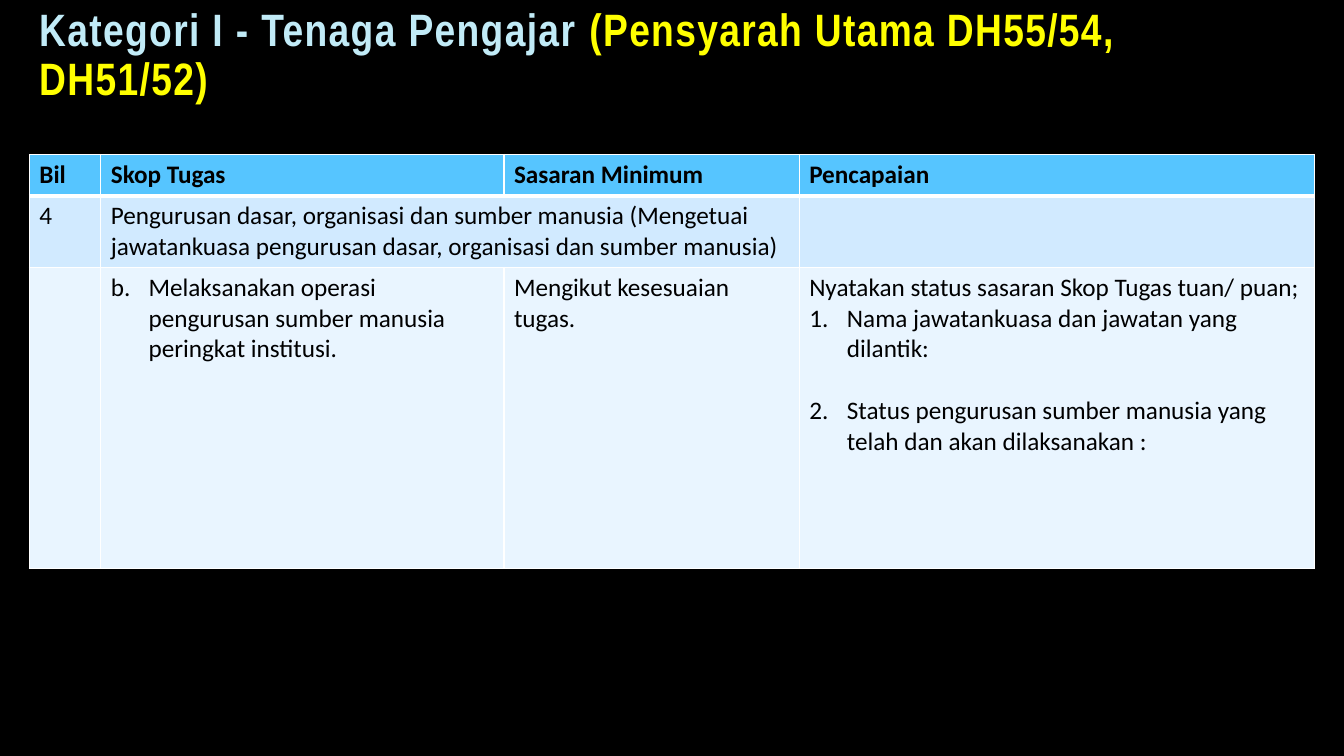
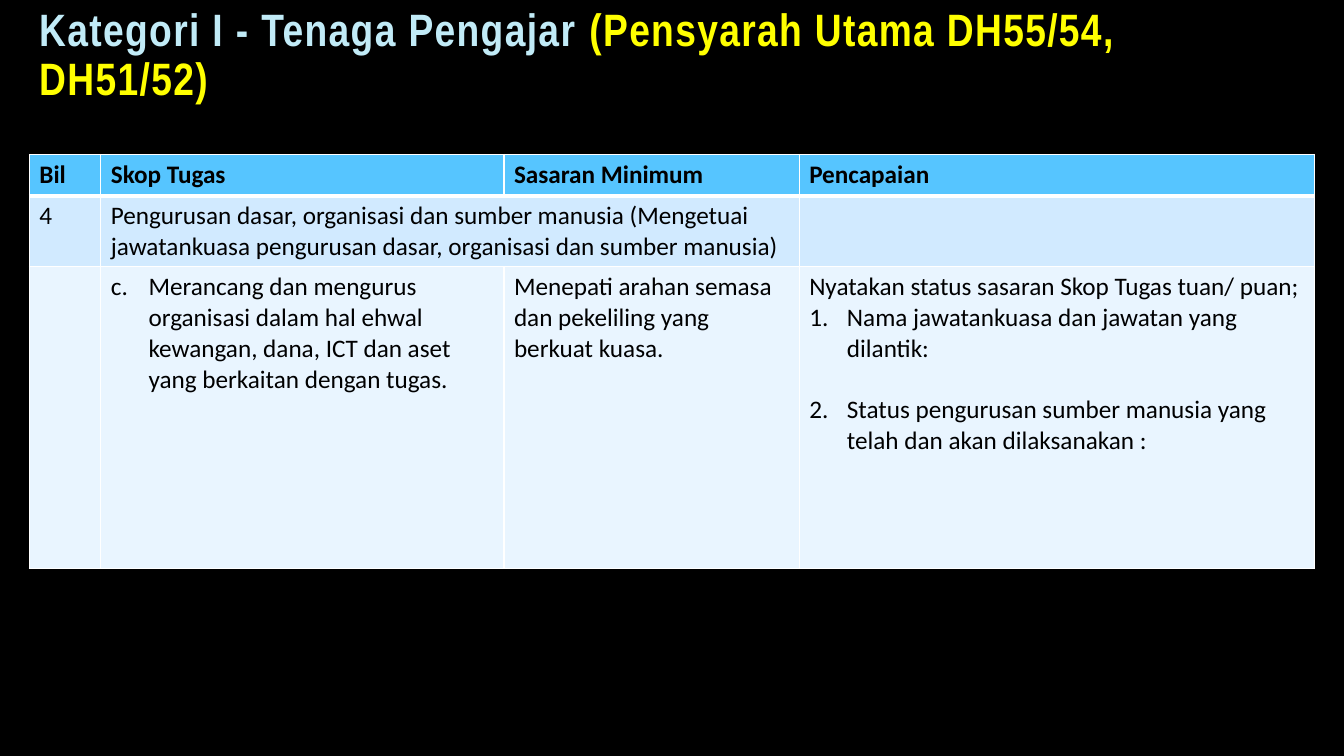
from lxml import etree
from pptx import Presentation
from pptx.dml.color import RGBColor
from pptx.enum.text import MSO_ANCHOR as Anchor
from pptx.oxml import parse_xml
from pptx.oxml.ns import nsdecls, qn
from pptx.util import Cm, Pt

BLACK = RGBColor(0x00, 0x00, 0x00)
WHITE = RGBColor(0xFF, 0xFF, 0xFF)
PALE_CYAN = RGBColor(0xC1, 0xEB, 0xF7)
YELLOW = RGBColor(0xFF, 0xFF, 0x00)
OUTLINE = RGBColor(0x40, 0x40, 0x40)
HEADER_BLUE = RGBColor(0x56, 0xC5, 0xFF)
BAND_BLUE = RGBColor(0xD1, 0xEA, 0xFF)
LIGHT_BLUE = RGBColor(0xE9, 0xF5, 0xFF)

TITLE_FONT, BODY_FONT = "Arial Narrow", "Calibri"
BODY_SIZE = Pt(18)
BLANK_LAYOUT = 6
LEFT = Cm(0.74)
COL_WIDTHS = [Cm(w) for w in (1.8, 10.16, 7.44, 12.98)]
ROW_HEIGHTS = [Cm(h) for h in (1.04, 1.79, 7.6)]
ROW_FILLS = [HEADER_BLUE, BAND_BLUE, LIGHT_BLUE]
LIST_INDENT = Cm(0.95)

TITLE = [("Kategori I - Tenaga Pengajar ", PALE_CYAN),
         ("(Pensyarah Utama DH55/54, DH51/52)", YELLOW)]
HEADINGS = ["Bil", "Skop Tugas", "Sasaran Minimum", "Pencapaian"]
SCOPE = ("Pengurusan dasar, organisasi dan sumber manusia (Mengetuai "
         "jawatankuasa pengurusan dasar, organisasi dan sumber manusia)")
STATUS_INTRO = "Nyatakan status sasaran Skop Tugas tuan/ puan;"
STATUS_ITEMS = ["Nama jawatankuasa dan jawatan yang dilantik:",
                "Status pengurusan sumber manusia yang telah dan akan dilaksanakan :"]

# Position of the task in the a, b, c list, task, minimum target
TASKS = [
    (2, "Melaksanakan operasi pengurusan sumber manusia peringkat institusi.",
     "Mengikut kesesuaian tugas."),
    (3, "Merancang dan mengurus organisasi dalam hal ehwal kewangan, dana, "
        "ICT dan aset yang berkaitan dengan tugas.",
     "Menepati arahan semasa dan pekeliling yang berkuat kuasa."),
]


def add_run(p, text, font, size, color, bold=False):
    r = p.add_run()
    r.text = text
    r.font.name, r.font.size, r.font.bold = font, size, bold
    r.font.color.rgb = color
    return r


def line_xml(tag, width, color, alpha=100):
    return parse_xml(
        f'<a:{tag} {nsdecls("a")} w="{Pt(width)}"><a:solidFill>'
        f'<a:srgbClr val="{color}"><a:alpha val="{alpha * 1000}"/></a:srgbClr>'
        f'</a:solidFill><a:prstDash val="solid"/></a:{tag}>')


def number_paragraph(p, scheme, start=1):
    pPr = p._p.get_or_add_pPr()
    pPr.set("marL", str(LIST_INDENT))
    pPr.set("indent", str(-LIST_INDENT))
    number = etree.SubElement(pPr, qn("a:buAutoNum"), type=scheme)
    if start > 1:
        number.set("startAt", str(start))


def write(p, text, bold=False):
    add_run(p, text, BODY_FONT, BODY_SIZE, BLACK, bold)


def style_cell(cell, fill, top, bottom):
    cell.fill.solid()
    cell.fill.fore_color.rgb = fill
    tcPr = cell._tc.get_or_add_tcPr()
    sides = (("lnL", 1), ("lnR", 1), ("lnT", top), ("lnB", bottom))
    for i, (tag, width) in enumerate(sides):
        tcPr.insert(i, line_xml(tag, width, WHITE))


def add_title(s):
    tf = s.shapes.add_textbox(LEFT, Cm(1.07), Cm(28.88), Cm(1.7)).text_frame
    tf.word_wrap = True
    tf.vertical_anchor = Anchor.BOTTOM
    p = tf.paragraphs[0]
    p.line_spacing = 0.9
    for text, color in TITLE:
        r = add_run(p, text, TITLE_FONT, Pt(32.4), color, bold=True)
        rPr = r._r.get_or_add_rPr()
        rPr.set("spc", "100")
        rPr.insert(0, line_xml("ln", 0.75, OUTLINE, alpha=10))


def add_status(tf):
    write(tf.paragraphs[0], STATUS_INTRO)
    for i, item in enumerate(STATUS_ITEMS):
        p = tf.add_paragraph()
        if i:
            p.space_before = Pt(22)
        number_paragraph(p, "arabicPeriod")
        write(p, item)


def add_task_table(s, start, task, target):
    table = s.shapes.add_table(
        len(ROW_HEIGHTS), len(COL_WIDTHS), LEFT, Cm(3.89),
        sum(COL_WIDTHS), sum(ROW_HEIGHTS)).table
    table.horz_banding = False
    for column, width in zip(table.columns, COL_WIDTHS):
        column.width = width

    # Fills and borders, with a thick rule below the header
    for i, (row, height, fill) in enumerate(zip(table.rows, ROW_HEIGHTS, ROW_FILLS)):
        row.height = height
        for cell in row.cells:
            style_cell(cell, fill, top=3 if i == 1 else 1, bottom=3 if i == 0 else 1)

    # Header
    for cell, heading in zip(table.rows[0].cells, HEADINGS):
        cell.vertical_anchor = Anchor.MIDDLE
        write(cell.text_frame.paragraphs[0], heading, bold=True)

    # Scope row, then the task
    table.cell(1, 1).merge(table.cell(1, 2))
    number_paragraph(table.cell(2, 1).text_frame.paragraphs[0], "alphaLcPeriod", start)
    for row, col, text in ((1, 0, "4"), (1, 1, SCOPE), (2, 1, task), (2, 2, target)):
        write(table.cell(row, col).text_frame.paragraphs[0], text)
    add_status(table.cell(2, 3).text_frame)


def main():
    prs = Presentation()
    prs.slide_width, prs.slide_height = Cm(33.87), Cm(19.05)
    background = prs.slide_master.background.fill
    background.solid()
    background.fore_color.rgb = BLACK
    for start, task, target in TASKS:
        s = prs.slides.add_slide(prs.slide_layouts[BLANK_LAYOUT])
        add_task_table(s, start, task, target)
        add_title(s)
    prs.save("out.pptx")


if __name__ == "__main__":
    main()
